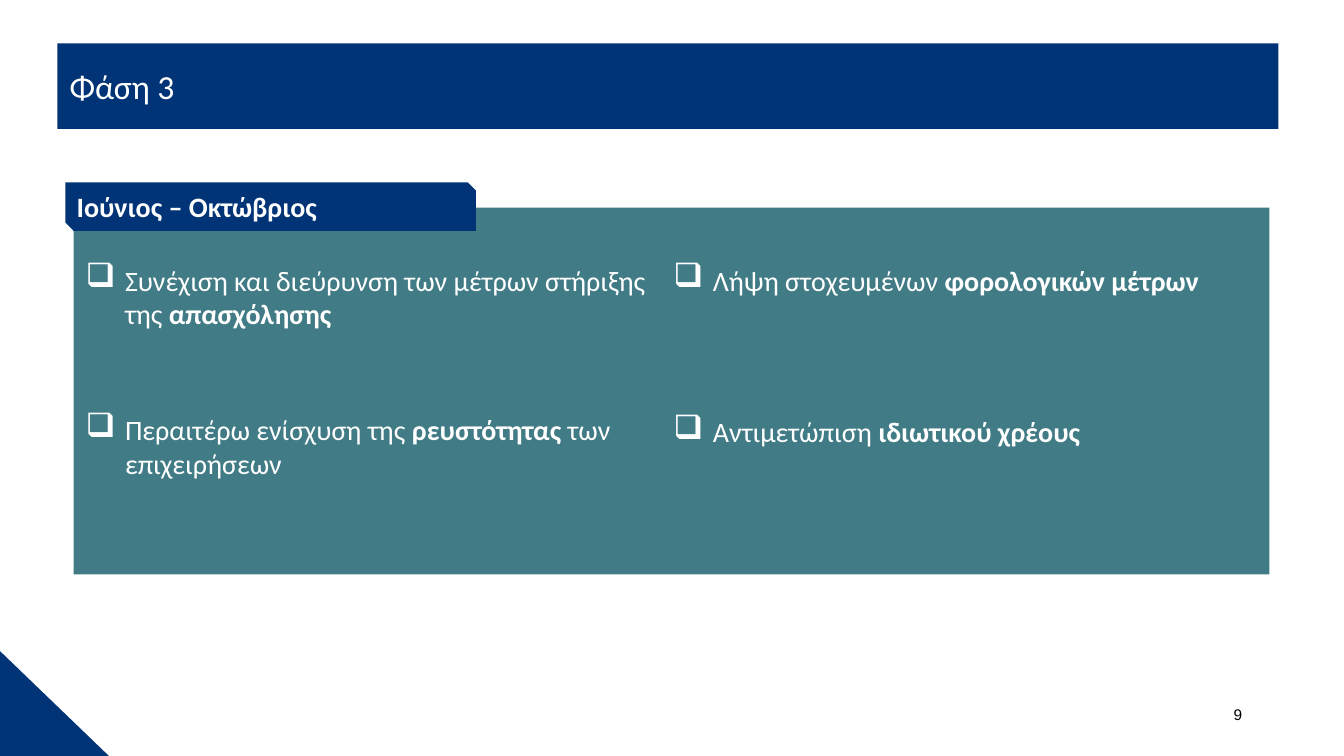
from lxml import etree
from pptx import Presentation
from pptx.dml.color import RGBColor as RGB
from pptx.enum.shapes import MSO_SHAPE as Kind
from pptx.enum.text import MSO_ANCHOR as Anchor, PP_ALIGN as Align
from pptx.oxml.ns import qn
from pptx.util import Inches, Pt

# Content: each item is a list of (text, bold) runs
TITLE = "Φάση 3"
PERIOD = "Ιούνιος – Οκτώβριος"
PAGE = "9"
# Each column: points between its items, then the items
COLS = [
    (59, [
        [("Συνέχιση και διεύρυνση των μέτρων στήριξης της ", False),
         ("απασχόλησης", True)],
        [("Περαιτέρω ενίσχυση της", False), (" ρευστότητας ", True),
         ("των επιχειρήσεων", False)],
    ]),
    (84, [
        [("Λήψη στοχευμένων ", False), ("φορολογικών μέτρων", True)],
        [("Αντιμετώπιση ", False), ("ιδιωτικού χρέους", True)],
    ]),
]
NAVY, TEAL, WHITE, BLACK = "013476", "417B85", "FFFFFF", "000000"
PANEL = (0.73, 2.06, 11.86, 3.64)
PAD_L, PAD_T, PAD_R = 0.12, 0.55, 0.08
HANG = 0.39

deck = Presentation()
deck.slide_width, deck.slide_height = Inches(13.33), Inches(7.5)
slide = deck.slides.add_slide(deck.slide_layouts[5])
shapes = slide.shapes


def paint(fill, color):
    fill.solid()
    fill.fore_color.rgb = RGB.from_string(color)


def block(kind, box, color):
    shape = shapes.add_shape(kind, *map(Inches, box))
    shape.shadow.inherit = False
    paint(shape.fill, color)
    shape.line.fill.background()
    return shape


def frame(shape, pad_x, pad_y, anchor):
    text = shape.text_frame
    values = {"margin_left": Inches(pad_x), "margin_right": Inches(pad_x),
              "margin_top": Inches(pad_y), "margin_bottom": Inches(pad_y),
              "vertical_anchor": anchor, "word_wrap": True}
    for name, value in values.items():
        setattr(text, name, value)
    return text


def write(para, runs, size, color=WHITE, face="Calibri", align=Align.LEFT):
    para.alignment = align
    for words, bold in runs:
        run = para.add_run()
        run.text = words
        values = {"size": Pt(size), "name": face, "bold": bold}
        for name, value in values.items():
            setattr(run.font, name, value)
        run.font.color.rgb = RGB.from_string(color)


def bullet(para):
    props = para._p.get_or_add_pPr()
    props.set("marL", str(Inches(HANG)))
    props.set("indent", str(-Inches(HANG)))
    etree.SubElement(props, qn("a:buSzPct")).set("val", "120000")
    etree.SubElement(props, qn("a:buChar")).set("char", "❑")


# Corner triangle
block(Kind.RIGHT_TRIANGLE, (0, 6.46, 1.08, 1.04), NAVY)

# Title bar with two snipped corners
title = shapes.title
title.left, title.top, title.width, title.height = map(
    Inches, (0.57, 0.43, 12.11, 0.85))
geom = etree.SubElement(title._element.spPr, qn("a:prstGeom"))
geom.set("prst", "snip2DiagRect")
etree.SubElement(geom, qn("a:avLst"))
paint(title.fill, NAVY)
write(frame(title, 0.12, 0.02, Anchor.MIDDLE).paragraphs[0],
      [(TITLE, False)], 24)

# Panel with equal columns of bullets
block(Kind.RECTANGLE, PANEL, TEAL)
left, top, wide, high = PANEL
col_w = (wide - PAD_L - PAD_R) / len(COLS)
for i, (gap, items) in enumerate(COLS):
    box = shapes.add_textbox(
        Inches(left + PAD_L + i * col_w), Inches(top + PAD_T),
        Inches(col_w), Inches(high - PAD_T))
    text = frame(box, 0, 0, Anchor.TOP)
    for j, runs in enumerate(items):
        para = text.add_paragraph() if j else text.paragraphs[0]
        bullet(para)
        if j:
            para.space_before = Pt(gap)
        write(para, runs, 20)

# Period tab
tab = block(Kind.SNIP_2_DIAG_RECTANGLE, (0.65, 1.81, 4.07, 0.48), NAVY)
write(frame(tab, 0.07, 0.03, Anchor.TOP).paragraphs[0], [(PERIOD, True)], 20)

# Page number
page = shapes.add_textbox(*map(Inches, (9.42, 6.95, 3, 0.4)))
write(frame(page, 0.1, 0.05, Anchor.TOP).paragraphs[0],
      [(PAGE, False)], 11, BLACK, "Arial", Align.RIGHT)

deck.save("out.pptx")
